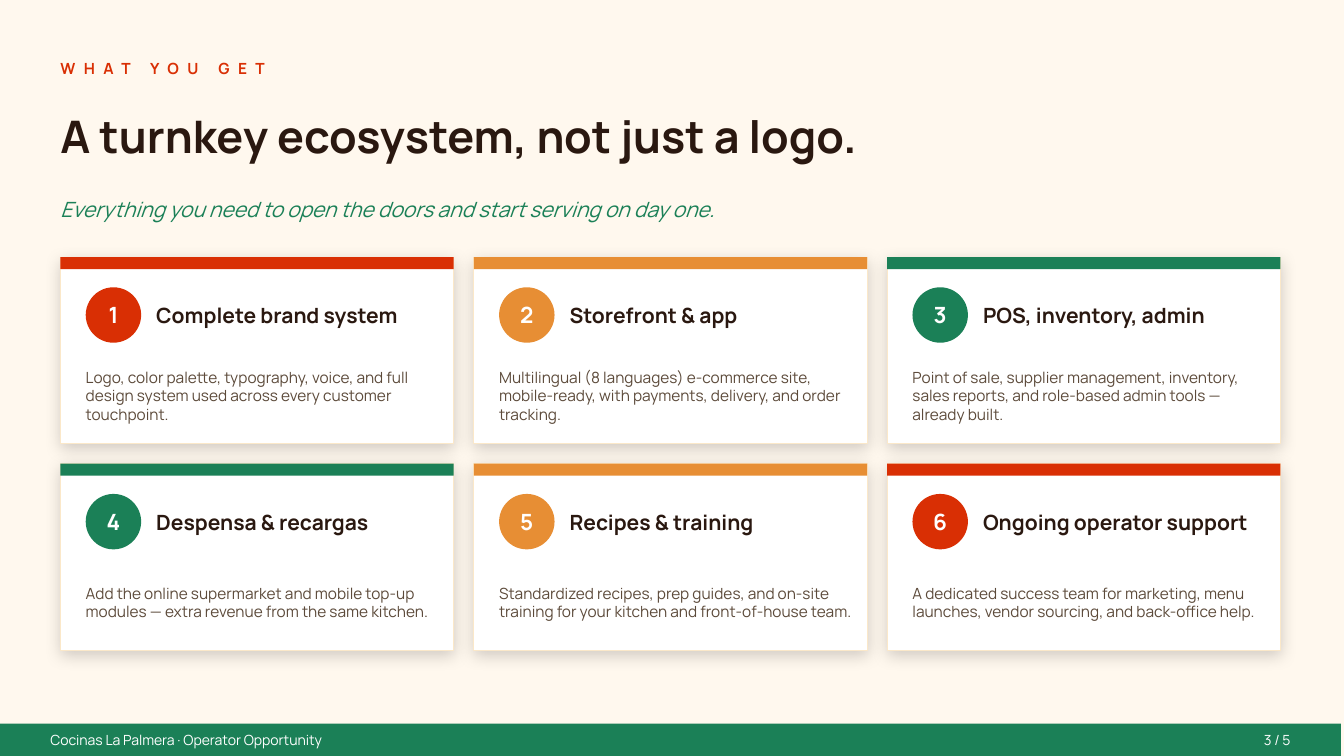
from dataclasses import dataclass

from lxml import etree
from pptx import Presentation
from pptx import util as u
from pptx.dml.color import RGBColor
from pptx.enum import shapes, text
from pptx.oxml import ns
from pptx.shapes.autoshape import Shape
from pptx.slide import Slide

CELL = u.Inches(0.05)


@dataclass(frozen=True)
class Theme:
    font: str = "Manrope"
    cream: str = "FFF8EE"
    sand: str = "FBE8C9"
    white: str = "FFFFFF"
    shade: str = "000000"
    red: str = "D92F04"
    orange: str = "E78E34"
    green: str = "1B8057"
    ink: str = "2A1810"
    brown: str = "5C4A3A"
    title: int = 32
    number: int = 16
    heading: int = 15
    body: int = 11
    footer: int = 10


@dataclass(frozen=True)
class Area:
    column: float
    row: float
    columns: float
    rows: float

    def inside(self, column: float, row: float, columns: float, rows: float) -> "Area":
        return Area(self.column + column, self.row + row, columns, rows)

    def lengths(self) -> list[u.Emu]:
        return [u.Emu(round(n * CELL)) for n in (self.column, self.row, self.columns, self.rows)]


@dataclass(frozen=True)
class Style:
    size: int
    color: str
    bold: bool = False
    italic: bool = False
    align: text.PP_ALIGN = text.PP_ALIGN.LEFT
    spacing: int = 0


@dataclass(frozen=True)
class Benefit:
    heading: str
    details: str
    accent: str


THEME = Theme()
KICKER = Style(THEME.body, THEME.red, bold=True, spacing=6)
TITLE = Style(THEME.title, THEME.ink, bold=True)
TAGLINE = Style(THEME.heading, THEME.green, italic=True)
NUMBER = Style(THEME.number, THEME.white, bold=True, align=text.PP_ALIGN.CENTER)
HEADING = Style(THEME.heading, THEME.ink, bold=True)
DETAILS = Style(THEME.body, THEME.brown)
FOOTER = Style(THEME.footer, THEME.white)
PAGE = Style(THEME.footer, THEME.white, align=text.PP_ALIGN.RIGHT)

FIRST_CARD = Area(12, 51, 78, 37)
CARD_GAP = 4
CARDS_PER_ROW = 3
FOOTER_BAND = Area(0, 143.6, 266, 6.4)

BENEFITS = [
    Benefit("Complete brand system",
            "Logo, color palette, typography, voice, and full design system used across every customer touchpoint.",
            THEME.red),
    Benefit("Storefront & app",
            "Multilingual (8 languages) e-commerce site, mobile-ready, with payments, delivery, and order tracking.",
            THEME.orange),
    Benefit("POS, inventory, admin",
            "Point of sale, supplier management, inventory, sales reports, and role-based admin tools — already built.",
            THEME.green),
    Benefit("Despensa & recargas",
            "Add the online supermarket and mobile top-up modules — extra revenue from the same kitchen.",
            THEME.green),
    Benefit("Recipes & training",
            "Standardized recipes, prep guides, and on-site training for your kitchen and front-of-house team.",
            THEME.orange),
    Benefit("Ongoing operator support",
            "A dedicated success team for marketing, menu launches, vendor sourcing, and back-office help.",
            THEME.red),
]


def write(holder: Shape, words: str, style: Style) -> None:
    frame = holder.text_frame
    frame.text = words
    frame.word_wrap = True
    frame.auto_size = text.MSO_AUTO_SIZE.NONE
    frame.vertical_anchor = text.MSO_ANCHOR.MIDDLE
    frame.margin_left = frame.margin_right = frame.margin_top = frame.margin_bottom = 0
    paragraph = frame.paragraphs[0]
    paragraph.alignment = style.align
    for run in paragraph.runs:
        run.font.name = THEME.font
        run.font.size = u.Pt(style.size)
        run.font.bold = style.bold
        run.font.italic = style.italic
        run.font.color.rgb = RGBColor.from_string(style.color)
        if style.spacing:
            run.font._element.set("spc", str(style.spacing * 100))


def add_words(slide: Slide, area: Area, words: str, style: Style) -> None:
    write(slide.shapes.add_textbox(*area.lengths()), words, style)


def add_block(slide: Slide, area: Area, color: str,
              outline: shapes.MSO_SHAPE = shapes.MSO_SHAPE.RECTANGLE) -> Shape:
    block = slide.shapes.add_shape(outline, *area.lengths())
    block.shadow.inherit = False
    block.fill.solid()
    block.fill.fore_color.rgb = RGBColor.from_string(color)
    block.line.fill.background()
    return block


def cast_shadow(block: Shape) -> None:
    effects = block._element.spPr.find(ns.qn("a:effectLst"))
    shadow = etree.SubElement(effects, ns.qn("a:outerShdw"), blurRad=str(u.Pt(12)),
                              dist=str(u.Pt(3)), dir="5400000", algn="ctr", rotWithShape="0")
    shade = etree.SubElement(shadow, ns.qn("a:srgbClr"), val=THEME.shade)
    etree.SubElement(shade, ns.qn("a:alpha"), val="18000")


def add_card(slide: Slide, index: int, benefit: Benefit) -> None:
    row, column = divmod(index, CARDS_PER_ROW)
    area = FIRST_CARD.inside(column * (FIRST_CARD.columns + CARD_GAP),
                             row * (FIRST_CARD.rows + CARD_GAP),
                             FIRST_CARD.columns, FIRST_CARD.rows)
    card = add_block(slide, area, THEME.white)
    card.line.color.rgb = RGBColor.from_string(THEME.sand)
    card.line.width = u.Pt(0.5)
    cast_shadow(card)
    add_block(slide, area.inside(0, 0, area.columns, 2.4), benefit.accent)
    badge = add_block(slide, area.inside(5, 6, 11, 11), benefit.accent, shapes.MSO_SHAPE.OVAL)
    write(badge, str(index + 1), NUMBER)
    add_words(slide, area.inside(19, 6, 56, 11), benefit.heading, HEADING)
    add_words(slide, area.inside(5, 19, 70, 17), benefit.details, DETAILS)


def main() -> None:
    deck = Presentation()
    deck.slide_width, deck.slide_height = u.Inches(13.33), u.Inches(7.5)
    slide = deck.slides.add_slide(deck.slide_layouts.get_by_name("Title Only"))
    slide.background.fill.solid()
    slide.background.fill.fore_color.rgb = RGBColor.from_string(THEME.cream)

    title = slide.shapes.title
    title.left, title.top, title.width, title.height = Area(12, 17, 242, 20).lengths()
    write(title, "A turnkey ecosystem, not just a logo.", TITLE)
    add_words(slide, Area(12, 10, 200, 7), "WHAT YOU GET", KICKER)
    add_words(slide, Area(12, 37, 242, 9),
              "Everything you need to open the doors and start serving on day one.", TAGLINE)

    for index, benefit in enumerate(BENEFITS):
        add_card(slide, index, benefit)

    add_block(slide, FOOTER_BAND, THEME.green)
    add_words(slide, FOOTER_BAND.inside(10, 0, 160, FOOTER_BAND.rows),
              "Cocinas La Palmera · Operator Opportunity", FOOTER)
    add_words(slide, FOOTER_BAND.inside(242, 0, 14, FOOTER_BAND.rows), "3 / 5", PAGE)
    deck.save("out.pptx")


if __name__ == "__main__":
    main()
